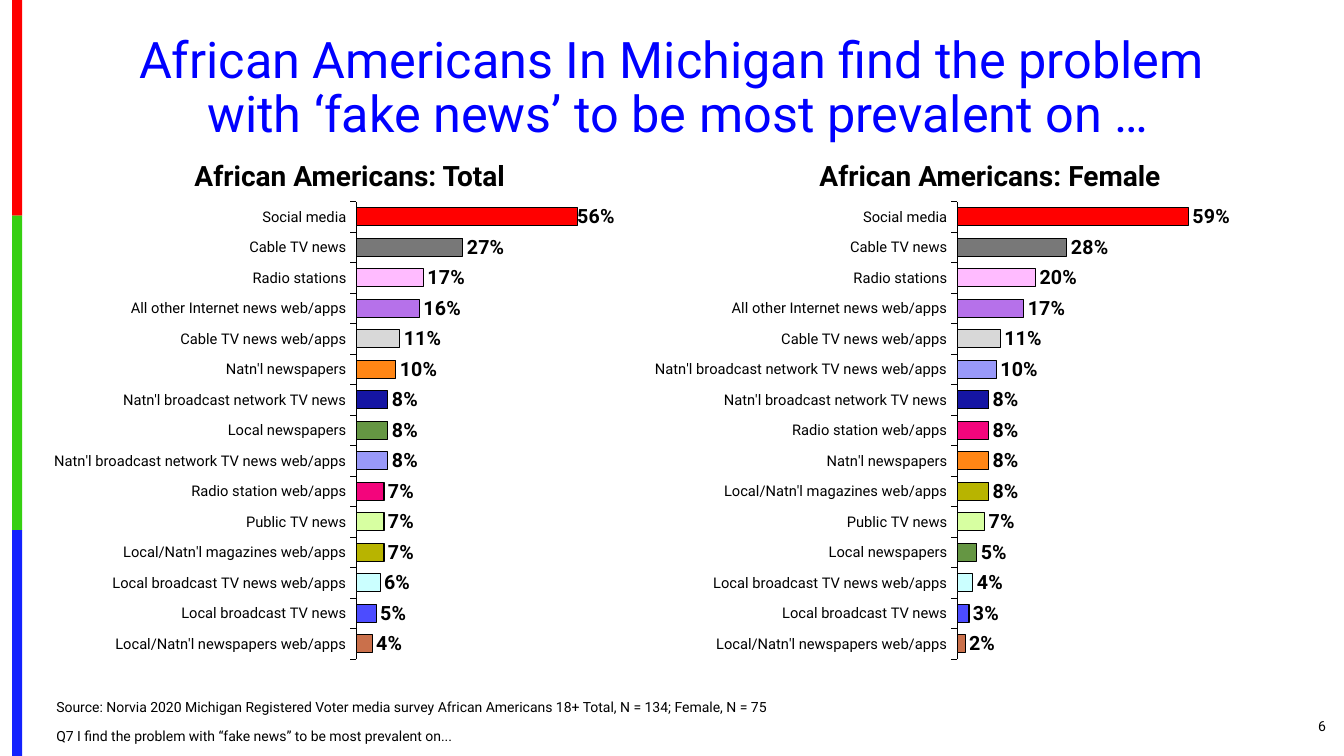
from dataclasses import dataclass

import pptx
import pptx.chart.chart
import pptx.chart.data
import pptx.dml.color
import pptx.enum.chart
import pptx.enum.shapes
import pptx.enum.text
import pptx.oxml
import pptx.oxml.ns
import pptx.oxml.xmlchemy
import pptx.slide
import pptx.text.text
import pptx.util

SCALE = 9144  # EMU in one px, 100 px to the inch
FONT = "Roboto"
BLACK = "000000"
ALIGN = pptx.enum.text.PP_ALIGN
ANCHOR = pptx.enum.text.MSO_ANCHOR

COLORS = {
    "Social media": "FF0000",
    "Cable TV news": "787878",
    "Radio stations": "FFBBFF",
    "All other Internet news web/apps": "B671EA",
    "Cable TV news web/apps": "D8D8D8",
    "Natn'l newspapers": "FF8615",
    "Natn'l broadcast network TV news": "1515A3",
    "Local newspapers": "659643",
    "Natn'l broadcast network TV news web/apps": "9999F9",
    "Radio station web/apps": "F3057C",
    "Public TV news": "D7FFA1",
    "Local/Natn'l magazines web/apps": "B8B400",
    "Local broadcast TV news web/apps": "CBFFFF",
    "Local broadcast TV news": "4C4CFF",
    "Local/Natn'l newspapers web/apps": "CA704B",
}


@dataclass
class Box:
    left: int
    top: int
    width: int
    height: int

    def emu(self) -> tuple[int, ...]:
        return tuple(n * SCALE for n in (self.left, self.top, self.width, self.height))


@dataclass
class Stripe:
    box: Box
    color: str


@dataclass
class Label:
    box: Box
    text: str
    size: int
    align: ALIGN = ALIGN.LEFT
    anchor: ANCHOR = ANCHOR.TOP
    color: str = BLACK
    bold: bool = False
    line: float = 1.0
    gap: int = 0


@dataclass
class Panel:
    box: Box
    plot: Box               # measured from the panel's corner
    shares: dict[str, int]  # percent, from the top bar down
    nudge: int = 0          # px to shift the top bar's label


STRIPES = [
    Stripe(Box(12, 0, 10, 214), "FE0000"),
    Stripe(Box(12, 214, 10, 312), "36CF12"),
    Stripe(Box(12, 526, 10, 224), "1322FE"),
]

TITLE = Label(
    Box(20, 29, 1305, 119),
    "African Americans In Michigan find the problem \v"
    "with ‘fake news’ to be most prevalent on …",
    36, ALIGN.CENTER, ANCHOR.MIDDLE, "0000FF", line=0.9)

LABELS = [
    Label(Box(1217, 700, 108, 40), "6", 10, ALIGN.RIGHT, ANCHOR.MIDDLE),
    Label(Box(46, 690, 1102, 54),
          "Source: Norvia 2020 Michigan Registered Voter media survey "
          "African Americans 18+ Total, N = 134; Female, N = 75\n"
          "Q7 I find the problem with “fake news” to be most prevalent on...",
          10, anchor=ANCHOR.BOTTOM, line=0.9, gap=10),
    Label(Box(164, 152, 366, 44), "African Americans: Total", 20, ALIGN.CENTER, bold=True),
    Label(Box(768, 152, 428, 44), "African Americans: Female", 20, ALIGN.CENTER, bold=True),
]

TOTAL = dict(zip(COLORS, (56, 27, 17, 16, 11, 10, 8, 8, 8, 7, 7, 7, 6, 5, 4)))
FEMALE = {
    "Social media": 59,
    "Cable TV news": 28,
    "Radio stations": 20,
    "All other Internet news web/apps": 17,
    "Cable TV news web/apps": 11,
    "Natn'l broadcast network TV news web/apps": 10,
    "Natn'l broadcast network TV news": 8,
    "Radio station web/apps": 8,
    "Natn'l newspapers": 8,
    "Local/Natn'l magazines web/apps": 8,
    "Public TV news": 7,
    "Local newspapers": 5,
    "Local broadcast TV news web/apps": 4,
    "Local broadcast TV news": 3,
    "Local/Natn'l newspapers web/apps": 2,
}
PANELS = [
    Panel(Box(637, 187, 675, 481), Box(293, 13, 311, 454), FEMALE),
    Panel(Box(43, 187, 675, 481), Box(291, 13, 313, 454), TOTAL, nudge=-4),
]


def rgb(color: str) -> pptx.dml.color.RGBColor:
    return pptx.dml.color.RGBColor.from_string(color)


def style(font: pptx.text.text.Font, size: float, color: str = BLACK, bold: bool = False) -> None:
    font.name = FONT
    font.size = pptx.util.Pt(size)
    font.bold = bold
    font.color.rgb = rgb(color)


def write(frame: pptx.text.text.TextFrame, label: Label) -> None:
    frame.word_wrap = True
    frame.auto_size = pptx.enum.text.MSO_AUTO_SIZE.NONE
    frame.vertical_anchor = label.anchor
    frame.text = label.text
    for i, para in enumerate(frame.paragraphs):
        para.alignment = label.align
        para.line_spacing = label.line
        para.space_before = pptx.util.Pt(label.gap if i else 0)
        for run in para.runs:
            style(run.font, label.size, label.color, label.bold)


def draw_stripe(slide: pptx.slide.Slide, stripe: Stripe) -> None:
    shape = slide.shapes.add_shape(pptx.enum.shapes.MSO_SHAPE.RECTANGLE, *stripe.box.emu())
    shape.shadow.inherit = False
    shape.fill.solid()
    shape.fill.fore_color.rgb = rgb(stripe.color)
    shape.line.fill.background()


def layout(body: str, **spots: float) -> pptx.oxml.xmlchemy.BaseOxmlElement:
    """Manual chart layout element with the given fractions."""
    body += "".join(f'<c:{key} val="{val}"/>' for key, val in spots.items())
    decl = pptx.oxml.ns.nsdecls("c")
    return pptx.oxml.parse_xml(
        f"<c:layout {decl}><c:manualLayout>{body}</c:manualLayout></c:layout>")


def place(chart: pptx.chart.chart.Chart, panel: Panel) -> None:
    """Fix the inner plot area inside the chart frame."""
    area = chart.element.find(".//" + pptx.oxml.ns.qn("c:plotArea"))
    for old in area.findall(pptx.oxml.ns.qn("c:layout")):
        area.remove(old)
    body = '<c:layoutTarget val="inner"/><c:xMode val="edge"/><c:yMode val="edge"/>'
    box, plot = panel.box, panel.plot
    area.insert(0, layout(body, x=plot.left / box.width, y=plot.top / box.height,
                          w=plot.width / box.width, h=plot.height / box.height))


def draw_panel(slide: pptx.slide.Slide, panel: Panel) -> None:
    kinds = pptx.enum.chart
    names = list(reversed(panel.shares))
    data = pptx.chart.data.CategoryChartData(number_format="0%")
    data.categories = names
    data.add_series("Series 1", [panel.shares[name] / 100 for name in names])
    chart = slide.shapes.add_chart(
        kinds.XL_CHART_TYPE.BAR_CLUSTERED, *panel.box.emu(), data).chart
    chart.has_title = chart.has_legend = False
    style(chart.font, 10)
    place(chart, panel)

    cats, vals = chart.category_axis, chart.value_axis
    cats.major_tick_mark = kinds.XL_TICK_MARK.OUTSIDE
    cats.format.line.color.rgb = rgb(BLACK)
    cats.format.line.width = pptx.util.Pt(0.75)
    style(cats.tick_labels.font, 10.5)
    vals.visible = vals.has_major_gridlines = False
    vals.minimum_scale, vals.maximum_scale = -0.05, 0.75

    plot = chart.plots[0]
    plot.gap_width = 72
    plot.vary_by_categories = False
    bars = plot.series[0]
    marks = bars.data_labels
    marks.show_value = True
    marks.number_format, marks.number_format_is_linked = "0%", False
    marks.position = kinds.XL_LABEL_POSITION.OUTSIDE_END
    style(marks.font, 14, bold=True)
    for i, name in enumerate(names):
        form = bars.points[i].format
        form.fill.solid()
        form.fill.fore_color.rgb = rgb(COLORS[name])
        form.line.color.rgb = rgb(BLACK)
        form.line.width = pptx.util.Pt(0.75)
    if panel.nudge:
        mark = bars.points[len(names) - 1].data_label
        style(mark.font, 14, bold=True)
        mark.position = kinds.XL_LABEL_POSITION.OUTSIDE_END
        spot = chart.element.find(".//" + pptx.oxml.ns.qn("c:dLbl"))
        spot.insert(1, layout("", x=panel.nudge / panel.box.width, y=0))


def main() -> None:
    deck = pptx.Presentation()
    deck.slide_width, deck.slide_height = 1333 * SCALE, 750 * SCALE
    slide = deck.slides.add_slide(deck.slide_layouts[5])
    for stripe in STRIPES:
        draw_stripe(slide, stripe)
    title = slide.shapes.title
    title.left, title.top, title.width, title.height = TITLE.box.emu()
    write(title.text_frame, TITLE)
    for label in LABELS:
        write(slide.shapes.add_textbox(*label.box.emu()).text_frame, label)
    for panel in PANELS:
        draw_panel(slide, panel)
    deck.save("out.pptx")


if __name__ == "__main__":
    main()
